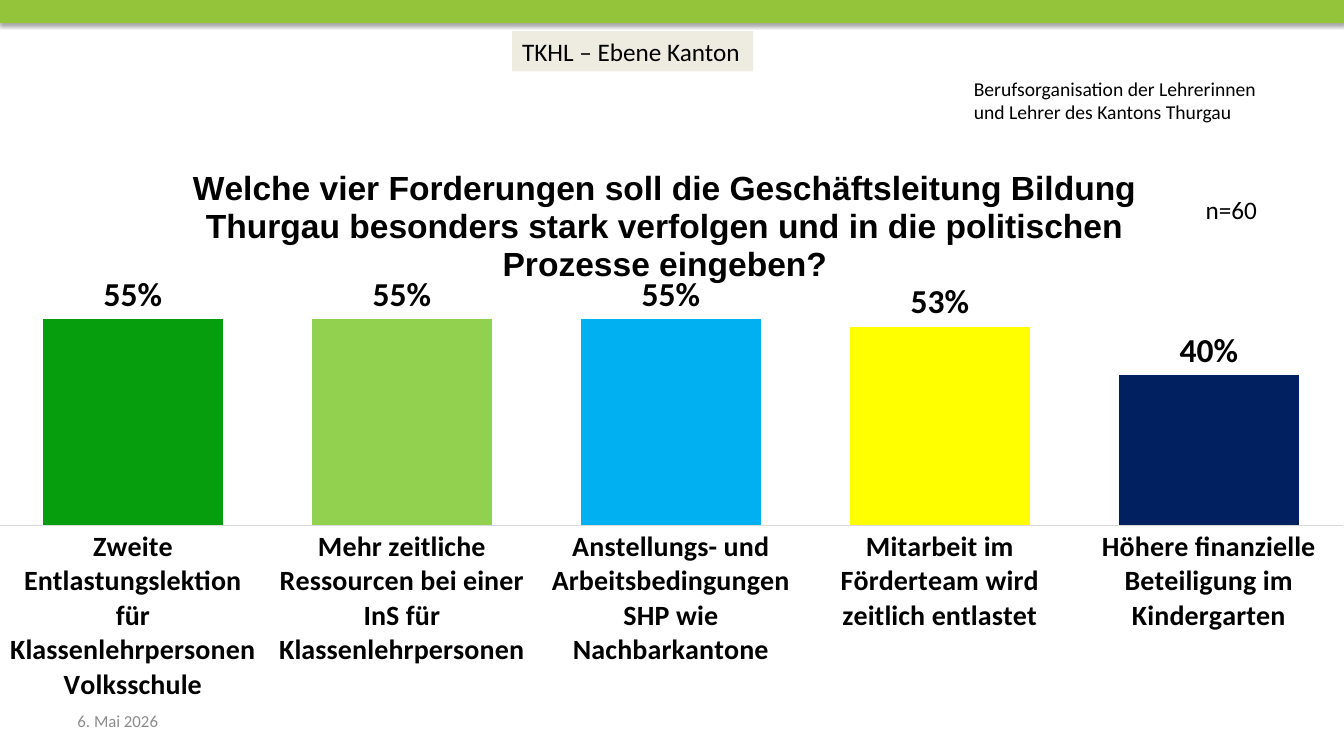
import pptx
import pptx.chart.data
import pptx.dml.color
import pptx.enum.chart
import pptx.enum.shapes
import pptx.enum.text
import pptx.oxml
import pptx.util
from pptx.util import Inches

COLORS = {
    "band": "94C43A", "tag": "EEECE1", "white": "FFFFFF", "text": "000000",
    "date": "8C8C8C", "axis": "D9D9D9", "series": "00CC66",
}
DEMANDS = [
    ("Zweite Entlastungslektion für Klassenlehrpersonen Volksschule", 0.55, "069E0D"),
    ("Mehr zeitliche Ressourcen bei einer InS für Klassenlehrpersonen", 0.55, "92D050"),
    ("Anstellungs- und Arbeitsbedingungen SHP wie Nachbarkantone", 0.55, "00B0F0"),
    ("Mitarbeit im Förderteam wird zeitlich entlastet", 0.53, "FFFF00"),
    ("Höhere finanzielle Beteiligung im Kindergarten", 0.40, "002060"),
]
QUESTION = ("Welche vier Forderungen soll die Geschäftsleitung Bildung Thurgau "
            "besonders stark verfolgen und in die politischen Prozesse eingeben?")
A_NS = 'xmlns:a="http://schemas.openxmlformats.org/drawingml/2006/main"'
C_NS = 'xmlns:c="http://schemas.openxmlformats.org/drawingml/2006/chart"'


def rgb(value):
    return pptx.dml.color.RGBColor.from_string(value)


def manual_layout(inner=False, **fractions):
    """Layout element placing a chart part by fractions of the chart area."""
    target = '<c:layoutTarget val="inner"/>' if inner else ""
    modes = "".join(f'<c:{k}Mode val="edge"/>' for k in "xy")
    values = "".join(f'<c:{k} val="{v}"/>' for k, v in fractions.items())
    return pptx.oxml.parse_xml(
        f"<c:layout {C_NS}><c:manualLayout>{target}{modes}{values}"
        "</c:manualLayout></c:layout>")


class Deck:
    def __init__(self, font="Calibri"):
        self.font = font
        self.prs = pptx.Presentation()
        self.prs.slide_width = Inches(13.33)
        self.prs.slide_height = Inches(7.5)
        self.s = self.prs.slides.add_slide(self.prs.slide_layouts[6])

    def style(self, font, size, bold=False, color="text", name=None):
        font.name = name or self.font
        font.size = pptx.util.Pt(size)
        font.bold = bold
        font.color.rgb = rgb(COLORS[color])

    def rect(self, box, fill):
        sp = self.s.shapes.add_shape(pptx.enum.shapes.MSO_SHAPE.RECTANGLE,
                                     *map(Inches, box))
        sp.shadow.inherit = False
        sp.fill.solid()
        sp.fill.fore_color.rgb = rgb(COLORS[fill])
        sp.line.fill.background()
        return sp

    def band(self, box):
        """Coloured rectangle with a soft shadow below it."""
        effects = self.rect(box, "band")._element.spPr.find(
            pptx.oxml.ns.qn("a:effectLst"))
        effects.append(pptx.oxml.parse_xml(
            f'<a:outerShdw {A_NS} blurRad="39400" dist="22900" dir="5400000" '
            'rotWithShape="0"><a:srgbClr val="000000"><a:alpha val="35000"/>'
            "</a:srgbClr></a:outerShdw>"))

    def text(self, box, lines, size, color="text", fill=None, wrap=True, middle=False):
        sp = self.rect(box, fill) if fill else self.s.shapes.add_textbox(*map(Inches, box))
        tf = sp.text_frame
        tf.word_wrap = wrap
        anchors = pptx.enum.text.MSO_ANCHOR
        tf.vertical_anchor = anchors.MIDDLE if middle else anchors.TOP
        if not wrap:
            tf.auto_size = pptx.enum.text.MSO_AUTO_SIZE.SHAPE_TO_FIT_TEXT
        tf.text = "\n".join(lines)
        for p in tf.paragraphs:
            p.alignment = pptx.enum.text.PP_ALIGN.LEFT
            self.style(p.font, size, color=color)

    def column_chart(self, box, title, rows):
        data = pptx.chart.data.CategoryChartData(number_format="0%")
        data.categories = [label for label, _, _ in rows]
        data.add_series("Series 1", [value for _, value, _ in rows])
        enums = pptx.enum.chart
        chart = self.s.shapes.add_chart(enums.XL_CHART_TYPE.COLUMN_CLUSTERED,
                                        *map(Inches, box), data).chart
        self.style(chart.font, 10)
        chart.has_legend = False

        chart.has_title = True
        p = chart.chart_title.text_frame.paragraphs[0]
        p.text = title
        self.style(p.font, 24, bold=True, name="Arial")
        chart.chart_title.include_in_layout = False
        title_xml = chart.chart_title._element
        for old in title_xml.findall(pptx.oxml.ns.qn("c:layout")):
            title_xml.remove(old)
        title_xml.find(pptx.oxml.ns.qn("c:tx")).addnext(manual_layout(x=0.14, y=0.04))

        plot = chart.plots[0]
        plot.gap_width = 50
        plot.vary_by_categories = False
        area = chart._chartSpace.chart.plotArea
        for old in area.findall(pptx.oxml.ns.qn("c:layout")):
            area.remove(old)
        area.insert(0, manual_layout(inner=True, x=0, y=0.29, w=1, h=0.4))

        values = chart.value_axis
        values.minimum_scale, values.maximum_scale = 0, 0.6
        values.has_major_gridlines = False
        values.visible = False
        cats = chart.category_axis
        cats.major_tick_mark = enums.XL_TICK_MARK.NONE
        cats.format.line.color.rgb = rgb(COLORS["axis"])
        cats.format.line.width = pptx.util.Pt(0.75)
        self.style(cats.tick_labels.font, 20, bold=True)

        series = plot.series[0]
        series.format.fill.solid()
        series.format.fill.fore_color.rgb = rgb(COLORS["series"])
        for i, (_, _, color) in enumerate(rows):
            fill = series.points[i].format.fill
            fill.solid()
            fill.fore_color.rgb = rgb(color)
        labels = series.data_labels
        labels.show_value = True
        labels.position = enums.XL_LABEL_POSITION.OUTSIDE_END
        labels.number_format = "0%"
        labels.number_format_is_linked = False
        self.style(labels.font, 24, bold=True)


def main():
    deck = Deck()
    deck.band((0, 0, 13.33, 0.23))
    deck.text((9.56, 0.35, 3.11, 1.29),
              ["Berufsorganisation der Lehrerinnen", "und Lehrer des Kantons Thurgau"],
              14, fill="white", middle=True)
    deck.column_chart((-0.02, 1.37, 13.35, 5.59), QUESTION, DEMANDS)
    deck.text((0.67, 6.95, 3.11, 0.4), ["6. Mai 2026"], 12, color="date", middle=True)
    deck.text((5.08, 0.31, 2.39, 0.4), ["TKHL – Ebene Kanton"], 18, fill="tag", wrap=False)
    deck.text((11.86, 1.88, 0.72, 0.4), ["n=60"], 18, wrap=False)
    deck.prs.save("out.pptx")


if __name__ == "__main__":
    main()
